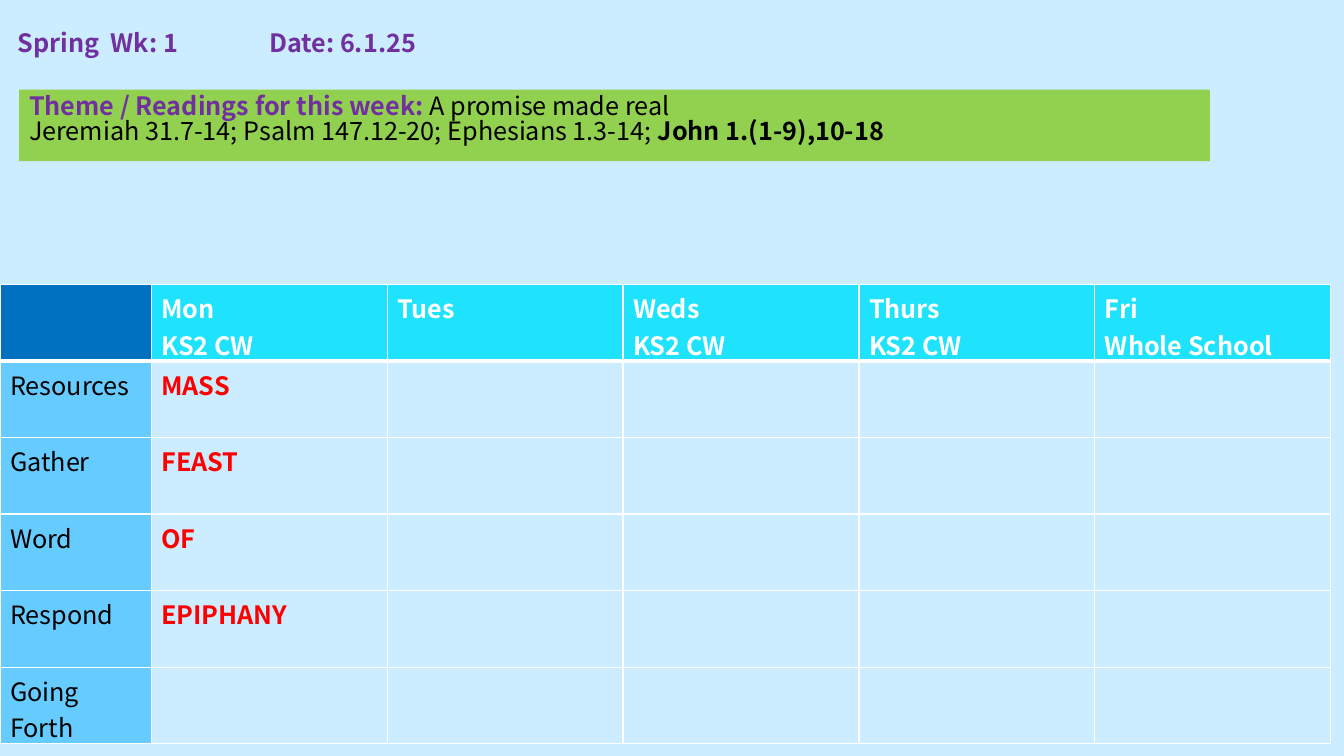
from dataclasses import dataclass

from lxml.etree import SubElement
from pptx import Presentation
from pptx.dml.color import RGBColor
from pptx.enum.shapes import MSO_SHAPE
from pptx.enum.text import MSO_ANCHOR, PP_ALIGN
from pptx.oxml.ns import qn
from pptx.slide import Slide
from pptx.table import _Cell
from pptx.text.text import TextFrame
from pptx.util import Inches, Pt


@dataclass(frozen=True)
class Theme:
    """Colours, font and type sizes of the planner."""
    font: str = "Noto Sans CJK JP"
    size: int = 18
    box_spacing: float = 0.84
    background: str = "CCECFF"
    banner: str = "92D050"
    corner: str = "0070C0"
    day: str = "1FE3FD"
    stage: str = "66CCFF"
    purple: str = "7030A0"
    black: str = "000000"
    white: str = "FFFFFF"
    red: str = "FF0000"


@dataclass(frozen=True)
class TextRun:
    """A piece of text with one look."""
    text: str
    color: str
    bold: bool = False


@dataclass(frozen=True)
class Stage:
    """A row of the planner with its Monday entry."""
    name: str
    monday: str


THEME = Theme()
DAYS = [["Mon", "KS2 CW"], ["Tues"], ["Weds", "KS2 CW"], ["Thurs", "KS2 CW"], ["Fri", "Whole School"]]
STAGES = [
    Stage("Resources", "MASS"),
    Stage("Gather", "FEAST"),
    Stage("Word", "OF"),
    Stage("Respond", "EPIPHANY"),
    Stage("Going Forth", ""),
]
BANNER_LINES = [
    [TextRun("Theme / Readings for this week: ", THEME.purple, True),
     TextRun("A promise made real", THEME.black)],
    [TextRun("Jeremiah 31.7-14; Psalm 147.12-20; Ephesians 1.3-14; ", THEME.black),
     TextRun("John 1.(1-9),10-18", THEME.black, True)],
]


def write_lines(frame: TextFrame, lines: list[list[TextRun]], spacing: float = 1.0) -> None:
    """Write each list of runs as one left-aligned paragraph."""
    frame.word_wrap = True
    for index, line in enumerate(lines):
        paragraph = frame.add_paragraph() if index else frame.paragraphs[0]
        paragraph.alignment = PP_ALIGN.LEFT
        paragraph.line_spacing = spacing
        for item in line:
            run = paragraph.add_run()
            run.text = item.text
            run.font.name = THEME.font
            run.font.size = Pt(THEME.size)
            run.font.bold = item.bold
            run.font.color.rgb = RGBColor.from_string(item.color)


def add_heading(slide: Slide) -> None:
    """Add the week and date line, spaced by tab stops."""
    box = slide.shapes.add_textbox(Inches(0.08), Inches(0.27), Inches(12.98), Inches(0.4))
    properties = box.text_frame.paragraphs[0]._p.get_or_add_pPr()
    tabs = SubElement(properties, qn("a:tabLst"))
    for position in (0.92, 2.49):
        SubElement(tabs, qn("a:tab"), pos=str(Inches(position)), algn="l")
    line = [TextRun("Spring\tWk: 1\tDate: 6.1.25", THEME.purple, True)]
    write_lines(box.text_frame, [line], THEME.box_spacing)


def add_banner(slide: Slide) -> None:
    """Add the green theme and readings banner."""
    banner = slide.shapes.add_shape(
        MSO_SHAPE.RECTANGLE, Inches(0.19), Inches(0.89), Inches(11.81), Inches(0.71))
    banner.shadow.inherit = False
    banner.fill.solid()
    banner.fill.fore_color.rgb = RGBColor.from_string(THEME.banner)
    banner.line.fill.background()
    banner.text_frame.vertical_anchor = MSO_ANCHOR.TOP
    write_lines(banner.text_frame, BANNER_LINES, THEME.box_spacing)


def style_cell(cell: _Cell, fill: str, bottom: int = 1, top: int = 1) -> None:
    """Give a cell white borders and a solid fill."""
    properties = cell._tc.get_or_add_tcPr()
    for side, width in (("L", 1), ("R", 1), ("T", top), ("B", bottom)):
        border = SubElement(properties, qn(f"a:ln{side}"), w=str(Pt(width)))
        solid = SubElement(border, qn("a:solidFill"))
        SubElement(solid, qn("a:srgbClr"), val=THEME.white)
    cell.fill.solid()
    cell.fill.fore_color.rgb = RGBColor.from_string(fill)


def fill_cell(cell: _Cell, lines: list[str], color: str, bold: bool) -> None:
    """Write lines of one look, or only set the type size when empty."""
    if lines:
        write_lines(cell.text_frame, [[TextRun(line, color, bold)] for line in lines])
    else:
        cell.text_frame.paragraphs[0].font.size = Pt(THEME.size)


def add_planner(slide: Slide) -> None:
    """Add the weekly table of days and stages."""
    table = slide.shapes.add_table(
        len(STAGES) + 1, len(DAYS) + 1, Inches(0), Inches(2.82), Inches(13.2), Inches(4.56)).table
    for index, column in enumerate(table.columns):
        column.width = Inches(2.34 if index else 1.5)
    for row in table.rows:
        row.height = Inches(0.76)

    for index, lines in enumerate([[], *DAYS]):
        cell = table.cell(0, index)
        style_cell(cell, THEME.day if index else THEME.corner, bottom=3)
        fill_cell(cell, lines, THEME.white, True)
    for number, stage in enumerate(STAGES, start=1):
        for index in range(len(DAYS) + 1):
            style_cell(table.cell(number, index), THEME.background if index else THEME.stage,
                       top=3 if number == 1 else 1)
        fill_cell(table.cell(number, 0), [stage.name], THEME.black, False)
        fill_cell(table.cell(number, 1), [stage.monday] if stage.monday else [], THEME.red, True)


def main() -> None:
    """Build and save the weekly planner slide."""
    presentation = Presentation()
    presentation.slide_width = Inches(13.33)
    presentation.slide_height = Inches(7.5)
    slide = presentation.slides.add_slide(presentation.slide_layouts[6])
    slide.background.fill.solid()
    slide.background.fill.fore_color.rgb = RGBColor.from_string(THEME.background)
    add_heading(slide)
    add_banner(slide)
    add_planner(slide)
    presentation.save("out.pptx")


if __name__ == "__main__":
    main()
